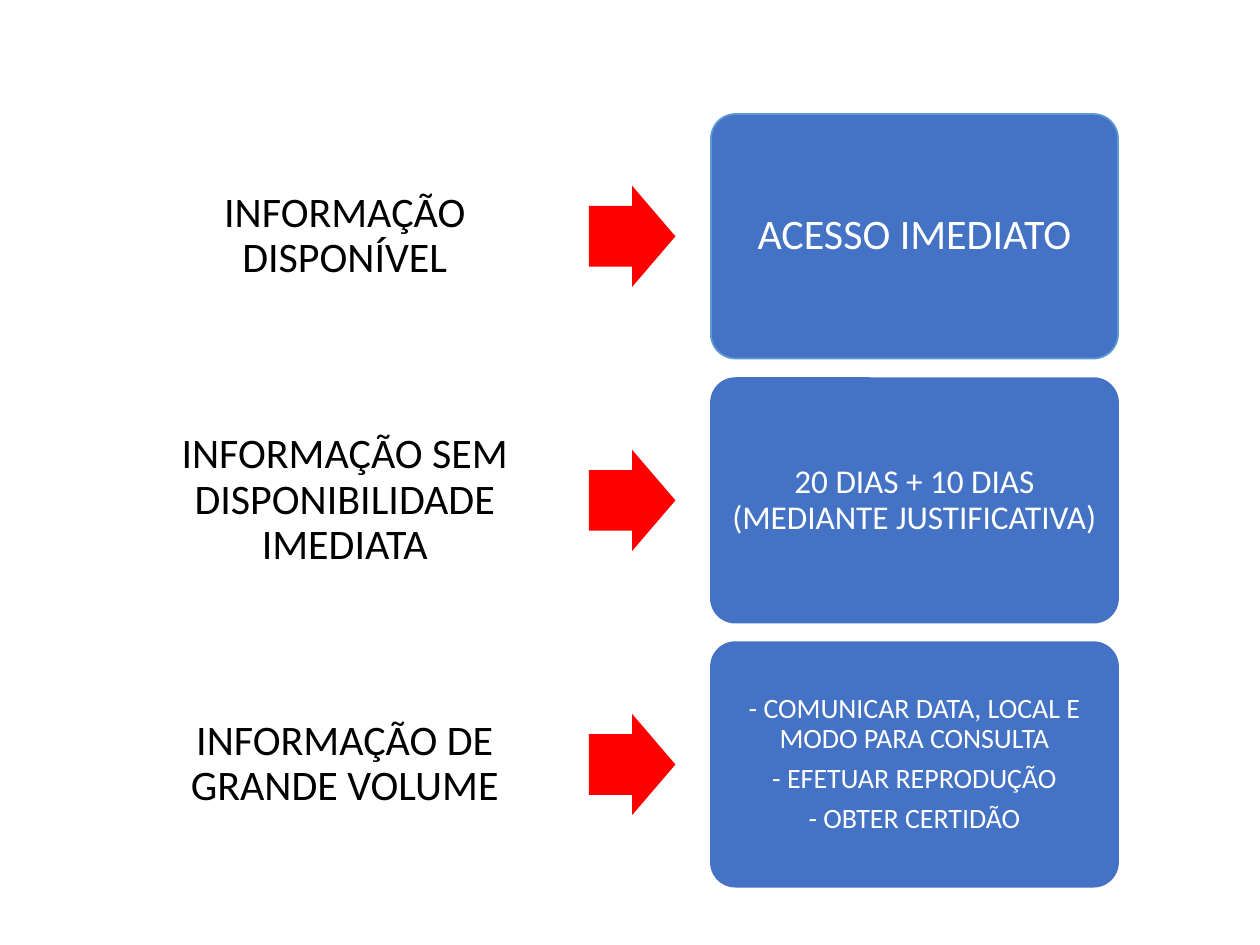
from pptx import Presentation
from pptx.dml.color import RGBColor
from pptx.enum.shapes import MSO_SHAPE
from pptx.enum.text import MSO_ANCHOR, PP_ALIGN
from pptx.util import Pt

ROUNDED = MSO_SHAPE.ROUNDED_RECTANGLE
ARROW = MSO_SHAPE.RIGHT_ARROW
MIDDLE = MSO_ANCHOR.MIDDLE
CENTER = PP_ALIGN.CENTER

BLUE, LIGHT_BLUE, RED = "4472C4", "5B9BD5", "FF0000"
BLACK, WHITE = "000000", "FFFFFF"


def color(hex_value):
    return RGBColor.from_string(hex_value)


def write(shape, lines, size, text_color, inset):
    frame = shape.text_frame
    frame.word_wrap = True
    frame.vertical_anchor = MIDDLE
    frame.margin_left = frame.margin_right = Pt(inset)
    frame.margin_top = frame.margin_bottom = Pt(inset)
    frame.text = "\n".join(lines)
    for index, paragraph in enumerate(frame.paragraphs):
        paragraph.alignment = CENTER
        paragraph.line_spacing = 0.9
        paragraph.space_before = Pt(0.35 * size if index else 0)
        paragraph.font.name = "Calibri"
        paragraph.font.size = Pt(size)
        paragraph.font.color.rgb = color(text_color)


presentation = Presentation()
presentation.slide_width, presentation.slide_height = Pt(720), Pt(540)
slide = presentation.slides.add_slide(presentation.slide_layouts[6])
shapes = slide.shapes

# Situation, its inset, answer lines, answer size, inset and outline
rows = [
    ("INFORMAÇÃO DISPONÍVEL", 7.2,
     ["ACESSO IMEDIATO"], 24, 7.2, LIGHT_BLUE),
    ("INFORMAÇÃO SEM DISPONIBILIDADE IMEDIATA", 10.8,
     ["20 DIAS + 10 DIAS (MEDIANTE JUSTIFICATIVA)"], 19, 5.7, BLUE),
    ("INFORMAÇÃO DE GRANDE VOLUME", 10.8,
     ["- COMUNICAR DATA, LOCAL E MODO PARA CONSULTA",
      "- EFETUAR REPRODUÇÃO",
      "- OBTER CERTIDÃO"], 16, 4.8, BLUE),
]
FIRST_TOP, ROW_PITCH = 65.2, 150.9
ROW_HEIGHT, LABEL_HEIGHT, ARROW_HEIGHT = 139.7, 131.8, 57.8

for index, (situation, situation_inset, answer, size, inset, outline) in enumerate(rows):
    top = FIRST_TOP + index * ROW_PITCH
    middle = top + ROW_HEIGHT / 2

    # Situation on the left
    label = shapes.add_textbox(Pt(84.7), Pt(middle - LABEL_HEIGHT / 2),
                               Pt(224.6), Pt(LABEL_HEIGHT))
    write(label, [situation], 24, BLACK, situation_inset)

    # Arrow to the answer
    arrow = shapes.add_shape(ARROW, Pt(336.5), Pt(middle - ARROW_HEIGHT / 2),
                             Pt(49.5), Pt(ARROW_HEIGHT))
    arrow.adjustments[0] = 0.6
    arrow.adjustments[1] = 0.5
    arrow.shadow.inherit = False
    arrow.fill.solid()
    arrow.fill.fore_color.rgb = color(RED)
    arrow.line.fill.background()

    # Answer card
    card = shapes.add_shape(ROUNDED, Pt(406.3), Pt(top), Pt(232.6), Pt(ROW_HEIGHT))
    card.adjustments[0] = 0.1
    card.shadow.inherit = False
    card.fill.solid()
    card.fill.fore_color.rgb = color(BLUE)
    card.line.color.rgb = color(outline)
    card.line.width = Pt(1)
    write(card, answer, size, WHITE, inset)

presentation.save("out.pptx")
